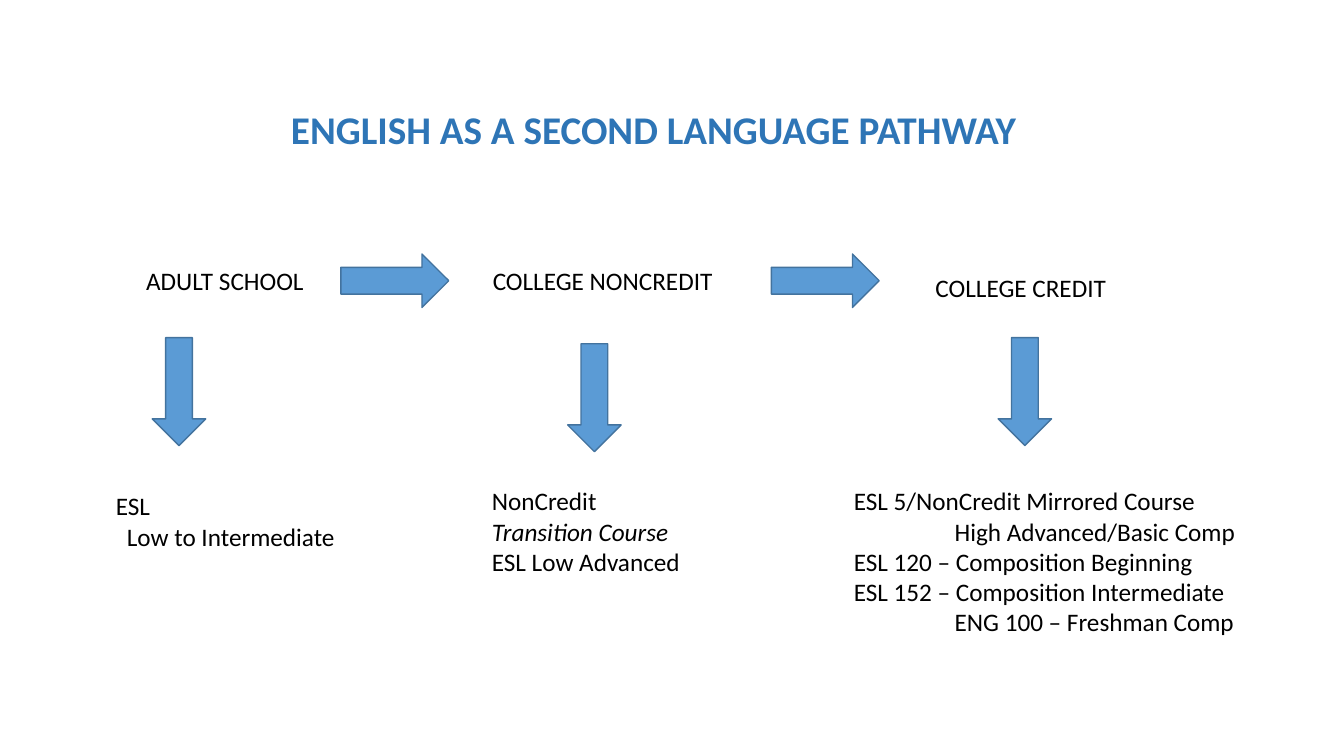
from dataclasses import dataclass

from pptx import Presentation
from pptx.dml.color import RGBColor
from pptx.enum.shapes import MSO_SHAPE as Shape
from pptx.enum.text import MSO_ANCHOR as Anchor, MSO_AUTO_SIZE as AutoSize, PP_ALIGN as Align
from pptx.util import Inches, Pt

SLIDE_WIDTH, SLIDE_HEIGHT = Inches(13.33), Inches(7.5)


@dataclass(frozen=True)
class Theme:
    font: str = "Calibri"
    title_size: int = 28
    text_size: int = 18
    title: RGBColor = RGBColor(0x2E, 0x75, 0xB6)
    text: RGBColor = RGBColor(0, 0, 0)
    arrow_fill: RGBColor = RGBColor(0x5B, 0x9B, 0xD5)
    arrow_line: RGBColor = RGBColor(0x43, 0x73, 0x9E)


THEME = Theme()

# Places are left, top, width, height in percent of the slide.
TITLE_PLACE = (6.08, 13.2, 85.07, 7.6)
ARROW_SIZE = (8.03, 7.07)
NEXT_STAGE_ARROWS = [(25.36, 33.6), (57.39, 33.6)]
COURSE_ARROWS = [(9.3, 48.27), (40.21, 49.07), (72.24, 48.27)]
STAGES = [
    ("ADULT SCHOOL", (10.13, 34.4, 13.8, 5.33)),
    ("COLLEGE NONCREDIT", (35.93, 34.4, 18, 5.33)),
    ("COLLEGE CREDIT", (68.87, 35.33, 14.78, 5.33)),
]
# Each line is its indent in inches and its (text, italic) spans.
COURSES = [
    ((7.88, 64.27, 19.8, 9.47), [
        (0, [("ESL", False)]),
        (0.11, [("Low to Intermediate", False)]),
    ]),
    ((35.86, 63.6, 16.73, 13.47), [
        (0, [("NonCredit ", False), ("Transition Course", True)]),
        (0, [("ESL Low Advanced", False)]),
    ]),
    ((62.79, 63.6, 32.26, 21.6), [
        (0, [("ESL 5/NonCredit Mirrored Course", False)]),
        (1, [("High Advanced/Basic Comp", False)]),
        (0, [("ESL 120 – Composition Beginning", False)]),
        (0, [("ESL 152 – Composition Intermediate", False)]),
        (1, [("ENG 100 – Freshman Comp", False)]),
    ]),
]


def share(left, top, width, height):
    """Turn percentages of the slide into lengths."""
    return (int(SLIDE_WIDTH * left / 100), int(SLIDE_HEIGHT * top / 100),
            int(SLIDE_WIDTH * width / 100), int(SLIDE_HEIGHT * height / 100))


def style(para, size=THEME.text_size, color=THEME.text, bold=False):
    para.font.name = THEME.font
    para.font.size = Pt(size)
    para.font.color.rgb = color
    para.font.bold = bold


def set_title(page):
    title = page.shapes.title
    title.left, title.top, title.width, title.height = share(*TITLE_PLACE)
    frame = title.text_frame
    frame.text = "ENGLISH AS A SECOND LANGUAGE PATHWAY"
    frame.vertical_anchor = Anchor.TOP
    para = frame.paragraphs[0]
    para.alignment = Align.CENTER
    style(para, THEME.title_size, THEME.title, bold=True)


def add_text(page, place, lines, wrap=True):
    frame = page.shapes.add_textbox(*share(*place)).text_frame
    frame.word_wrap = wrap
    frame.auto_size = AutoSize.SHAPE_TO_FIT_TEXT
    for number, (indent, spans) in enumerate(lines):
        para = frame.add_paragraph() if number else frame.paragraphs[0]
        if indent:
            para._p.get_or_add_pPr().set("marL", str(Inches(indent)))
        style(para)
        for text, italic in spans:
            span = para.add_run()
            span.text = text
            if italic:
                span.font.italic = True


def add_arrow(page, corner, rotation=0):
    arrow = page.shapes.add_shape(Shape.RIGHT_ARROW, *share(*corner, *ARROW_SIZE))
    arrow.rotation = rotation
    arrow.shadow.inherit = False
    arrow.fill.solid()
    arrow.fill.fore_color.rgb = THEME.arrow_fill
    arrow.line.color.rgb = THEME.arrow_line
    arrow.line.width = Pt(1)


def main():
    deck = Presentation()
    deck.slide_width, deck.slide_height = SLIDE_WIDTH, SLIDE_HEIGHT
    page = deck.slides.add_slide(deck.slide_layouts.get_by_name("Title Only"))
    set_title(page)
    for label, place in STAGES:
        add_text(page, place, [(0, [(label, False)])], wrap=False)
    for corner in NEXT_STAGE_ARROWS:
        add_arrow(page, corner)
    for place, lines in COURSES:
        add_text(page, place, lines)
    for corner in COURSE_ARROWS:
        add_arrow(page, corner, rotation=90)
    deck.save("out.pptx")


if __name__ == "__main__":
    main()
